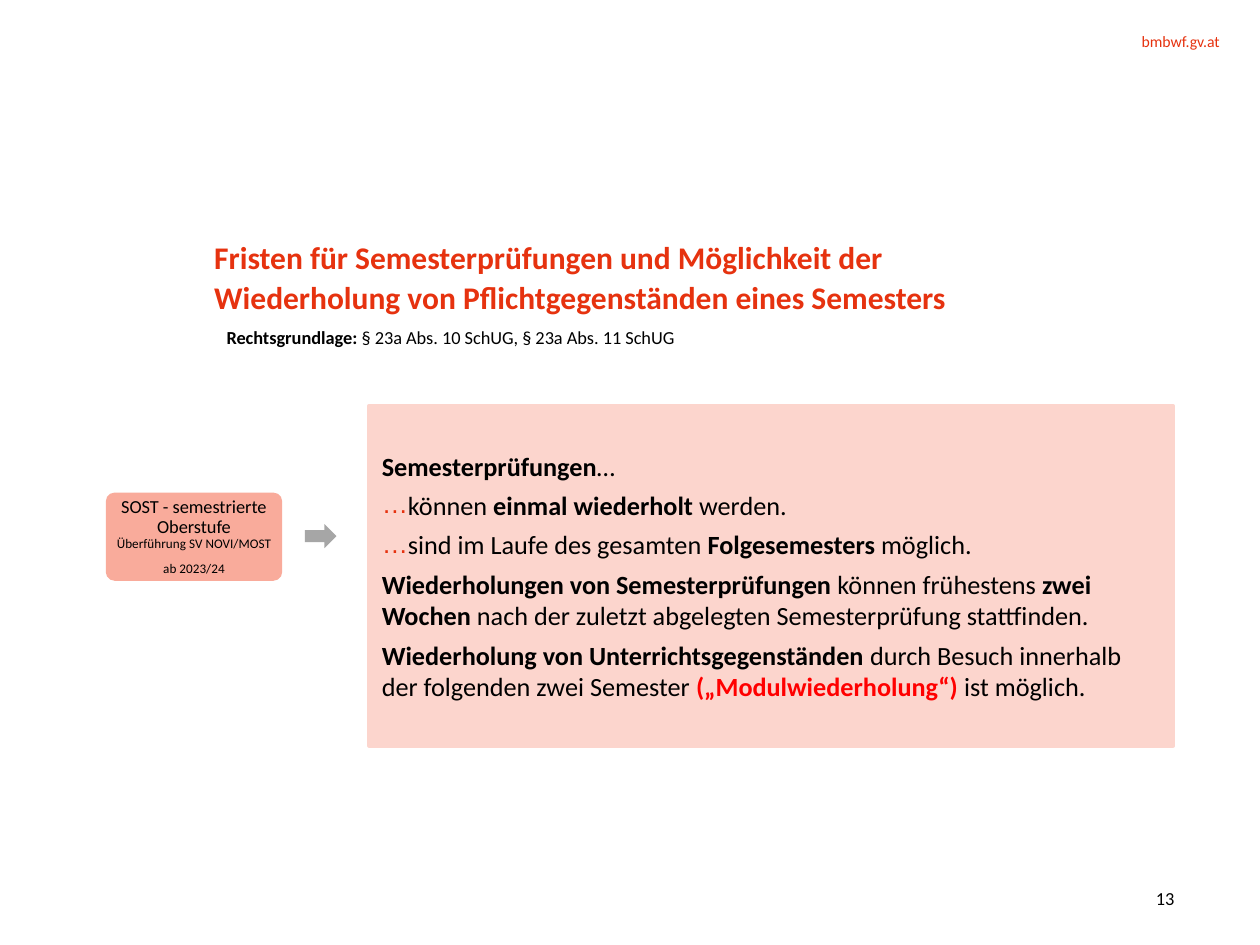
from dataclasses import dataclass

from lxml.etree import SubElement
from pptx import Presentation
from pptx.dml.color import RGBColor
from pptx.enum.shapes import MSO_SHAPE
from pptx.enum.text import MSO_ANCHOR, MSO_AUTO_SIZE, PP_ALIGN
from pptx.oxml.ns import qn
from pptx.util import Inches, Pt


@dataclass(frozen=True)
class Theme:
    font: str = "Calibri"
    red: str = "E6320F"
    signal: str = "FF0000"
    black: str = "000000"
    panel: str = "FCD5CD"
    label: str = "F9AB9B"
    arrow: str = "A6A6A6"
    title_size: float = 18
    body_size: float = 15
    text_size: float = 10.5
    link_size: float = 9
    note_size: float = 7.5


THEME = Theme()
COLUMNS, ROWS = 100, 75


def add_span(para, text, size=THEME.text_size, color=THEME.black, bold=False):
    """Append one formatted run to a paragraph."""
    span = para.add_run()
    span.text = text
    font = span.font
    font.name, font.size, font.bold = THEME.font, Pt(size), bold
    font.color.rgb = RGBColor.from_string(color)


def set_bullet(para, mark=None, indent=0.0, color=THEME.red):
    """Give a paragraph a hanging bullet, or none without a mark."""
    props = para._p.get_or_add_pPr()
    props.set("marL", str(Inches(indent)))
    props.set("indent", str(-Inches(indent)))
    if mark is None:
        SubElement(props, qn("a:buNone"))
        return
    SubElement(SubElement(props, qn("a:buClr")), qn("a:srgbClr"), val=color)
    SubElement(props, qn("a:buChar"), char=mark)


class SlideBuilder:
    def __init__(self, deck, theme):
        self.theme = theme
        self.page = deck.slides.add_slide(deck.slide_layouts[1])
        self.column = deck.slide_width / COLUMNS
        self.row = deck.slide_height / ROWS

    def area(self, left, top, width, height):
        return (round(left * self.column), round(top * self.row),
                round(width * self.column), round(height * self.row))

    def place(self, box, *cells):
        box.left, box.top, box.width, box.height = self.area(*cells)

    def frame(self, box, anchor=MSO_ANCHOR.TOP, inset=None):
        frame = box.text_frame
        frame.word_wrap = True
        frame.auto_size = MSO_AUTO_SIZE.NONE
        frame.vertical_anchor = anchor
        if inset is not None:
            frame.margin_left = frame.margin_right = Inches(inset)
            frame.margin_top = frame.margin_bottom = Inches(inset)
        return frame

    def paragraphs(self, frame, count):
        return [frame.paragraphs[0]] + [frame.add_paragraph() for _ in range(count - 1)]

    def title(self, lines, *cells):
        box = self.page.shapes.title
        self.place(box, *cells)
        frame = self.frame(box, inset=0)
        for para, line in zip(self.paragraphs(frame, len(lines)), lines):
            para.alignment = PP_ALIGN.LEFT
            para.line_spacing = Pt(22.5)
            add_span(para, line, size=self.theme.title_size, color=self.theme.red, bold=True)

    def panel(self, items, *cells):
        box = self.page.placeholders[1]
        self.place(box, *cells)
        self.fill(box, self.theme.panel)
        box.line.color.rgb = RGBColor.from_string(self.theme.panel)
        box.line.width = Pt(2.08)
        frame = self.frame(box, MSO_ANCHOR.MIDDLE)
        for para, (mark, spans) in zip(self.paragraphs(frame, len(items)), items):
            set_bullet(para, mark, indent=0.14 if mark else 0)
            para.space_before, para.space_after = Pt(0), Pt(4.5)
            for text, style in spans:
                add_span(para, text, size=self.theme.body_size, **style)

    def text(self, spans, *cells, align=PP_ALIGN.LEFT, anchor=MSO_ANCHOR.TOP, inset=None):
        box = self.page.shapes.add_textbox(*self.area(*cells))
        para = self.frame(box, anchor, inset).paragraphs[0]
        para.alignment = align
        for text, style in spans:
            add_span(para, text, **style)

    def fill(self, box, color):
        box.fill.solid()
        box.fill.fore_color.rgb = RGBColor.from_string(color)

    def shape(self, kind, color, *cells):
        box = self.page.shapes.add_shape(kind, *self.area(*cells))
        box.shadow.inherit = False
        self.fill(box, color)
        box.line.fill.background()
        return box

    def label(self, heading, notes, *cells):
        box = self.shape(MSO_SHAPE.ROUNDED_RECTANGLE, self.theme.label, *cells)
        box.adjustments[0] = 0.1
        frame = self.frame(box, MSO_ANCHOR.MIDDLE, inset=0.03)
        for index, (para, note) in enumerate(zip(self.paragraphs(frame, len(notes)), notes)):
            para.alignment = PP_ALIGN.CENTER
            para.line_spacing, para.space_after = 0.9, Pt(6)
            if index == 0:
                add_span(para, heading)
                para.add_line_break()
            add_span(para, note, size=self.theme.note_size)


def main():
    deck = Presentation()
    deck.slide_width, deck.slide_height = Inches(10), Inches(7.5)
    slide = SlideBuilder(deck, THEME)
    plain, strong = {}, {"bold": True}

    # Header link and page number
    slide.text([("bmbwf.gv.at", {"size": THEME.link_size, "color": THEME.red})],
               72.7, 2.5, 24.1, 1.5, align=PP_ALIGN.RIGHT, inset=0)
    slide.text([("13", plain)], 84.3, 69.8, 8.9, 2.9,
               align=PP_ALIGN.RIGHT, anchor=MSO_ANCHOR.MIDDLE, inset=0)

    # Title and legal basis
    slide.title(["Fristen für Semesterprüfungen und Möglichkeit der",
                 "Wiederholung von Pflichtgegenständen eines Semesters"],
                17, 18.8, 65.4, 6.8)
    slide.text([("Rechtsgrundlage: ", strong),
                ("§ 23a Abs. 10 SchUG, § 23a Abs. 11 SchUG", plain)],
               17, 25.4, 49.7, 2.8)

    # School type and arrow to the rules
    slide.label("SOST - semestrierte Oberstufe",
                ["Überführung SV NOVI/MOST", "ab 2023/24"],
                8.4, 39.1, 14, 7)
    slide.shape(MSO_SHAPE.RIGHT_ARROW, THEME.arrow, 24.2, 41.6, 2.5, 1.9)

    # Rules
    slide.panel([
        (None, [("Semesterprüfungen", strong), ("…", plain)]),
        ("…", [("können ", plain), ("einmal wiederholt ", strong), ("werden.", plain)]),
        ("…", [("sind im Laufe des gesamten ", plain), ("Folgesemesters", strong),
               (" möglich.", plain)]),
        (None, [("Wiederholungen von Semesterprüfungen ", strong),
                ("können frühestens ", plain), ("zwei Wochen", strong),
                (" nach der zuletzt abgelegten Semesterprüfung stattfinden.", plain)]),
        (None, [("Wiederholung von Unterrichtsgegenständen ", strong),
                ("durch Besuch innerhalb der folgenden zwei Semester ", plain),
                ("(„Modulwiederholung“) ", {"bold": True, "color": THEME.signal}),
                ("ist möglich.", plain)]),
    ], 29.3, 32.2, 63.8, 27)

    deck.save("out.pptx")


if __name__ == "__main__":
    main()
